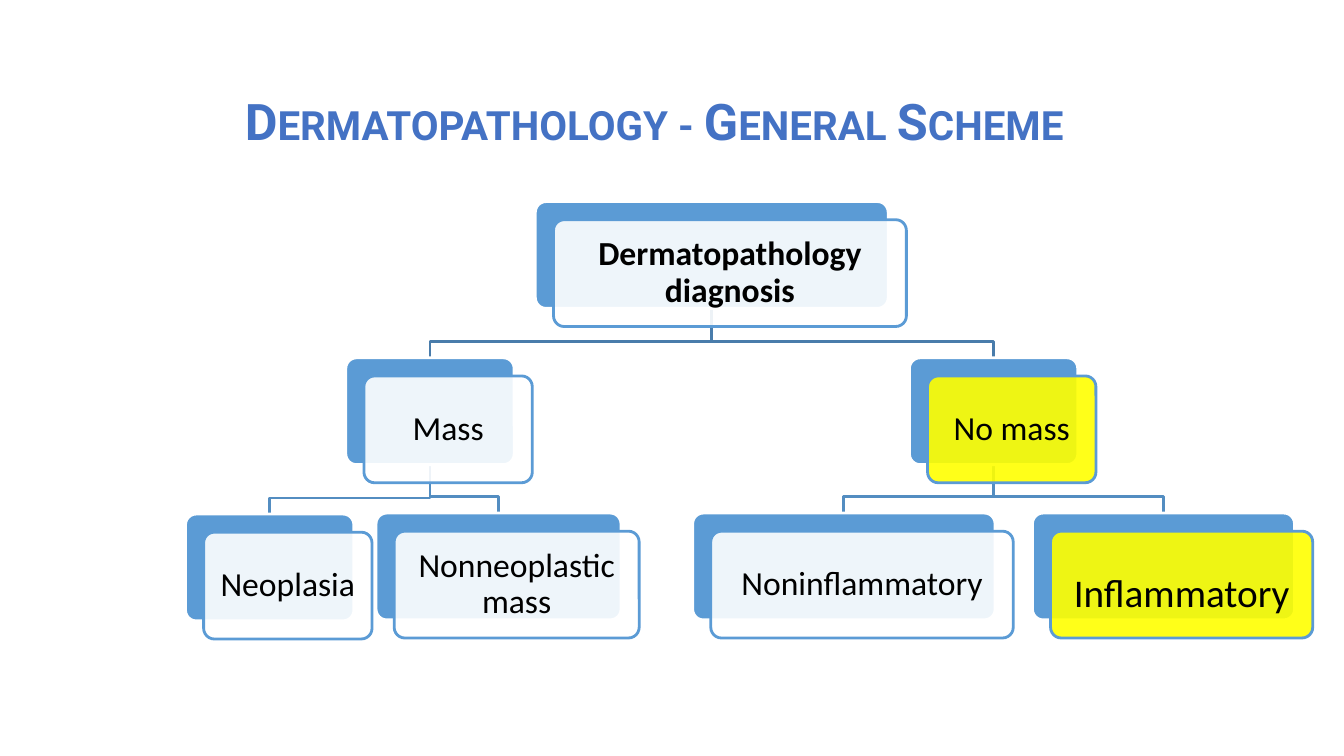
from dataclasses import dataclass

from lxml import etree
from pptx import Presentation
from pptx.dml.color import RGBColor
from pptx.enum.shapes import MSO_SHAPE
from pptx.enum.text import MSO_ANCHOR, PP_ALIGN
from pptx.oxml.ns import qn
from pptx.util import Inches, Pt

ROUNDED = MSO_SHAPE.ROUNDED_RECTANGLE
MIDDLE, BOTTOM = MSO_ANCHOR.MIDDLE, MSO_ANCHOR.BOTTOM
CENTER = PP_ALIGN.CENTER
COLORS = {
    "title": "4472C4",
    "card": "5B9BD5",
    "white": "FFFFFF",
    "highlight": "FFFF00",
    "text": "000000",
    "upper_link": "497CAB",
    "lower_link": "538DC1",
}
CARD_HEIGHT = 1.06
CARD_OFFSET = 0.18
ELBOW_GAP = 0.16
INSET = 0.13


@dataclass
class Node:
    """One box of the diagnosis tree."""
    text: str
    left: float
    top: float
    width: float
    fill: str = "white"
    size: int = 24
    bold: bool = False
    text_drop: float = 0

    @property
    def center(self):
        """Return the horizontal middle of the back card."""
        return self.left + self.width / 2


def color(name):
    """Return the named palette colour."""
    return RGBColor.from_string(COLORS[name])


def style_font(font, name, size, color_name, bold):
    """Set the typeface, size, colour and weight of a font."""
    font.name = name
    font.size = Pt(size)
    font.bold = bold
    font.color.rgb = color(color_name)


def add_title(slide, text):
    """Add the small-caps heading."""
    box = slide.shapes.add_textbox(Inches(2.33), Inches(0.3), Inches(10.33), Inches(1.25))
    frame = box.text_frame
    frame.word_wrap = True
    frame.vertical_anchor = BOTTOM
    paragraph = frame.paragraphs[0]
    paragraph.line_spacing = 0.9
    run = paragraph.add_run()
    run.text = text
    run._r.get_or_add_rPr().set("cap", "small")
    style_font(paragraph.font, "Roboto", 36, "title", True)


def add_link(slide, parent, child, color_name):
    """Draw the elbow line from a parent node to its child."""
    elbow = child.top - ELBOW_GAP
    points = [
        (parent.center, elbow),
        (child.center, elbow),
        (child.center, child.top),
    ]
    builder = slide.shapes.build_freeform(
        Inches(parent.center), Inches(parent.top + CARD_HEIGHT))
    builder.add_line_segments([(Inches(x), Inches(y)) for x, y in points], close=False)
    shape = builder.convert_to_shape()
    shape.shadow.inherit = False
    shape.fill.background()
    shape.line.color.rgb = color(color_name)
    shape.line.width = Pt(2)


def add_card(slide, node, offset, fill, line):
    """Add one rounded card of a node."""
    shape = slide.shapes.add_shape(
        ROUNDED, Inches(node.left + offset), Inches(node.top + offset),
        Inches(node.width), Inches(CARD_HEIGHT))
    shape.adjustments[0] = 0.1
    shape.shadow.inherit = False
    shape.fill.solid()
    shape.fill.fore_color.rgb = color(fill)
    shape.line.color.rgb = color(line)
    shape.line.width = Pt(2)
    return shape


def add_node(slide, node):
    """Add the back card and the translucent labelled front card."""
    add_card(slide, node, 0, "card", "white")
    front = add_card(slide, node, CARD_OFFSET, node.fill, "card")
    fill_color = front._element.spPr.find(qn("a:solidFill"))[0]
    etree.SubElement(fill_color, qn("a:alpha")).set("val", "90000")
    frame = front.text_frame
    frame.word_wrap = True
    frame.vertical_anchor = MIDDLE
    frame.margin_left = frame.margin_right = frame.margin_bottom = Inches(INSET)
    frame.margin_top = Inches(INSET + 2 * node.text_drop)
    paragraph = frame.paragraphs[0]
    paragraph.text = node.text
    paragraph.alignment = CENTER
    paragraph.line_spacing = 0.9
    style_font(paragraph.font, "Calibri", node.size, "text", node.bold)


def main():
    """Build and save the slide."""
    presentation = Presentation()
    presentation.slide_width = Inches(13.33)
    presentation.slide_height = Inches(7.5)
    slide = presentation.slides.add_slide(presentation.slide_layouts[6])
    add_title(slide, "Dermatopathology - General Scheme")

    diagnosis = Node("Dermatopathology diagnosis", 5.31, 2, 3.5, bold=True)
    mass = Node("Mass", 3.43, 3.55, 1.67)
    no_mass = Node("No mass", 9.02, 3.55, 1.67, "highlight")
    neoplasia = Node("Neoplasia", 1.84, 5.1, 1.67)
    nonneoplastic = Node("Nonneoplastic mass", 3.73, 5.09, 2.43)
    noninflammatory = Node("Noninflammatory", 6.87, 5.09, 3)
    inflammatory = Node("Inflammatory", 10.24, 5.09, 2.6, "highlight", 28, text_drop=0.1)

    branches = [
        (no_mass, [inflammatory, noninflammatory], "lower_link"),
        (mass, [nonneoplastic, neoplasia], "lower_link"),
        (diagnosis, [no_mass, mass], "upper_link"),
    ]
    for parent, children, link_color in branches:
        for child in children:
            add_link(slide, parent, child, link_color)
    for node in (diagnosis, mass, neoplasia, nonneoplastic,
                 no_mass, noninflammatory, inflammatory):
        add_node(slide, node)
    presentation.save("out.pptx")


if __name__ == "__main__":
    main()
